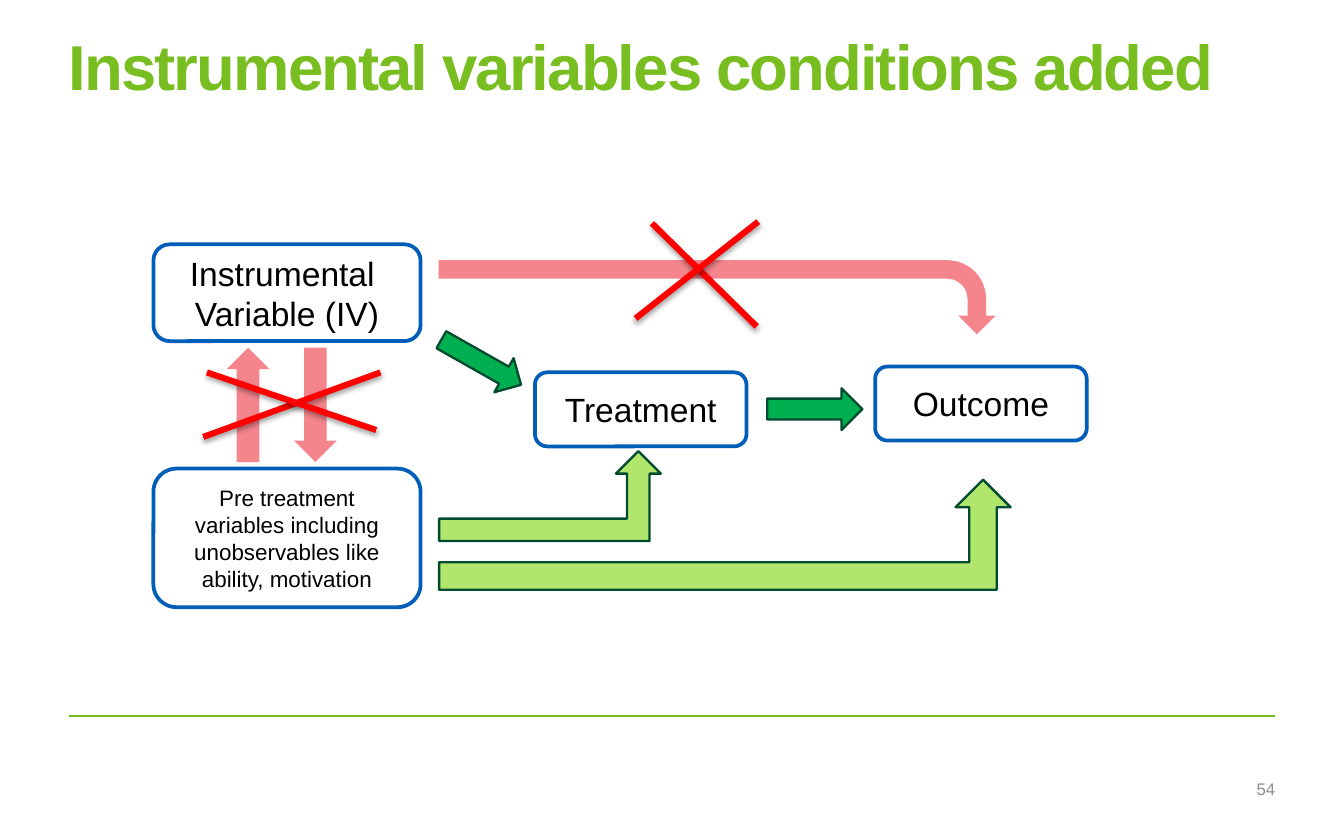
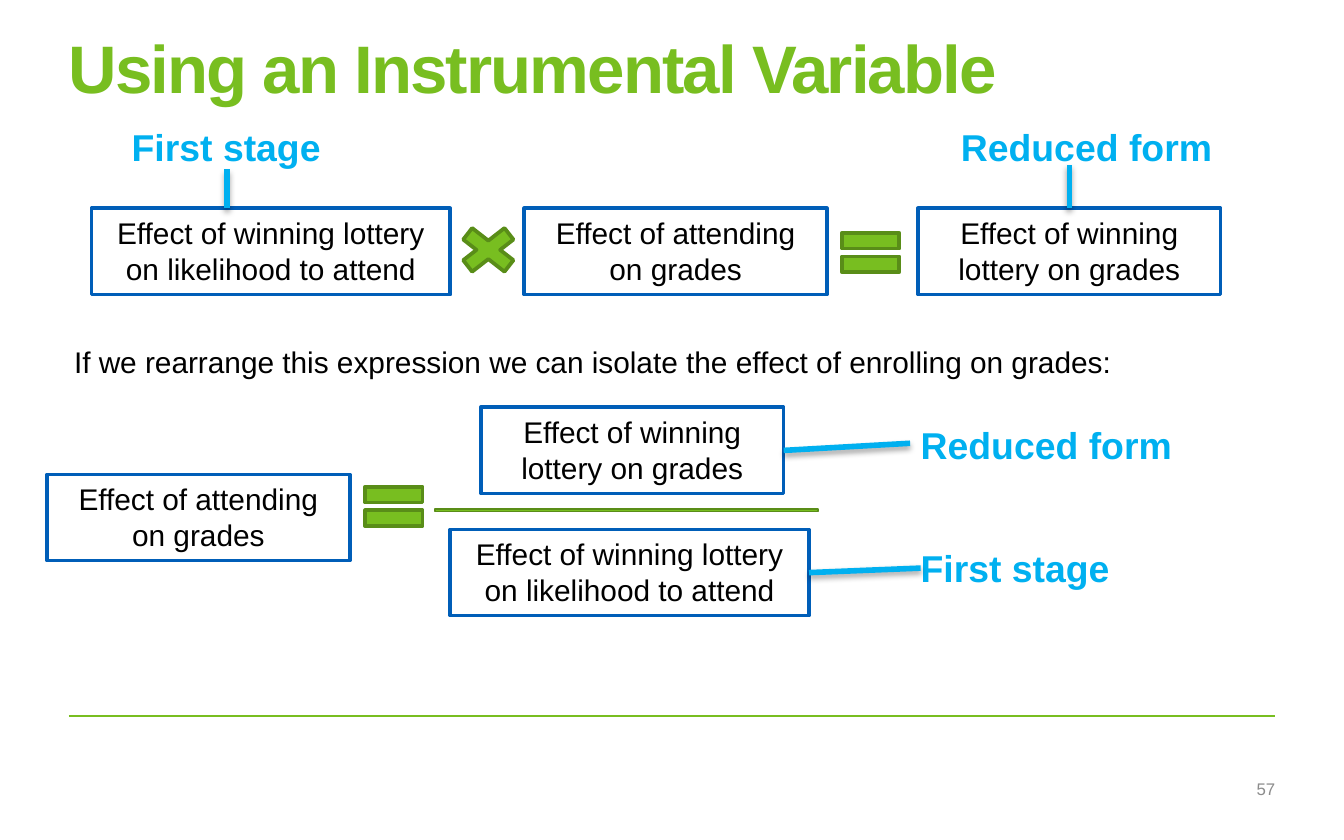
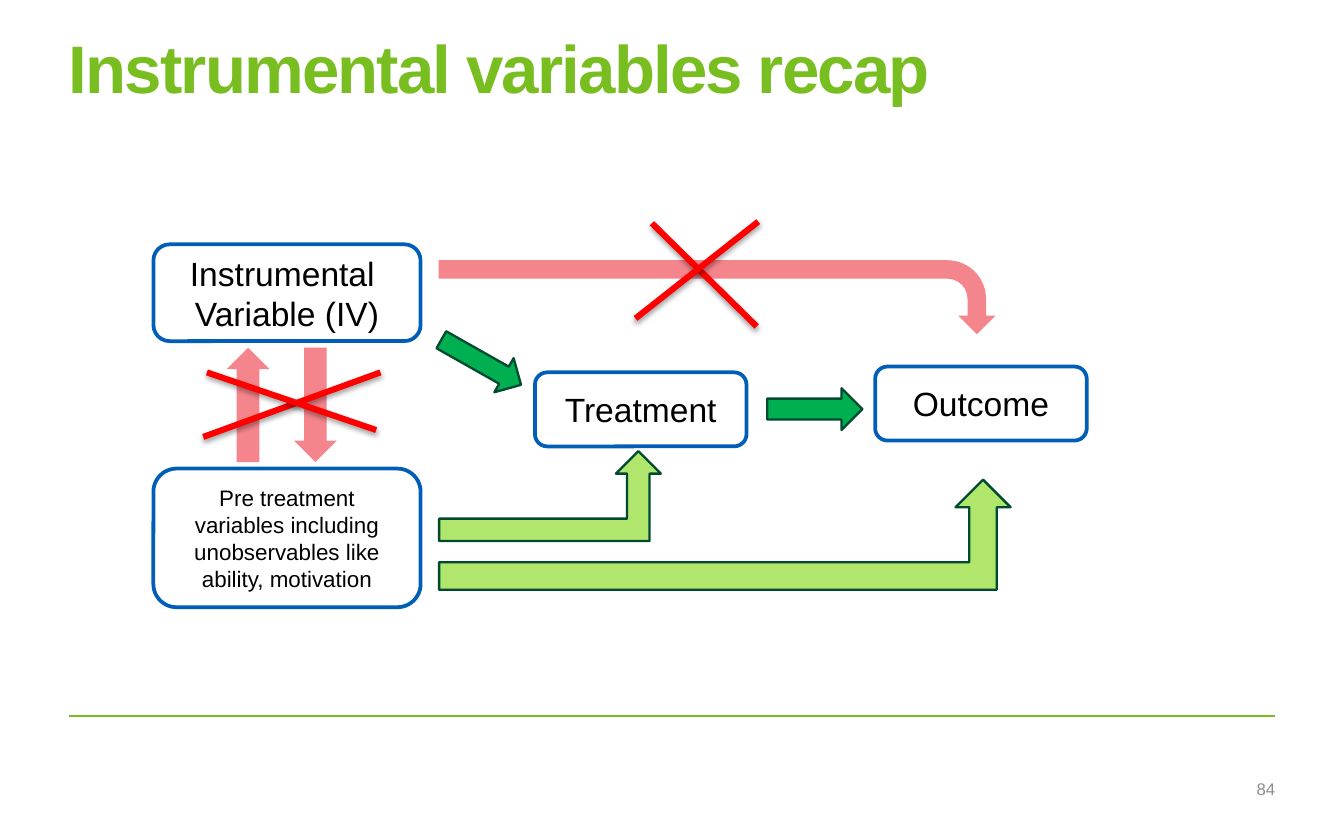
from lxml import etree
from pptx import Presentation
from pptx.dml.color import RGBColor
from pptx.enum.shapes import MSO_CONNECTOR, MSO_SHAPE
from pptx.enum.text import MSO_ANCHOR, PP_ALIGN
from pptx.oxml.ns import qn
from pptx.util import Cm, Pt

STRAIGHT = MSO_CONNECTOR.STRAIGHT
RECT = MSO_SHAPE.RECTANGLE
ROUND_RECT = MSO_SHAPE.ROUNDED_RECTANGLE
BENT_ARROW = MSO_SHAPE.BENT_ARROW
BENT_UP_ARROW = MSO_SHAPE.BENT_UP_ARROW
RIGHT_ARROW = MSO_SHAPE.RIGHT_ARROW
TIMES = MSO_SHAPE.MATH_MULTIPLY
EQUALS = MSO_SHAPE.MATH_EQUAL
MINUS = MSO_SHAPE.MATH_MINUS
TOP, MIDDLE = MSO_ANCHOR.TOP, MSO_ANCHOR.MIDDLE
LEFT, CENTER, RIGHT = PP_ALIGN.LEFT, PP_ALIGN.CENTER, PP_ALIGN.RIGHT
TOP_SIDE, RIGHT_SIDE = 0, 3

FONT = "Arial"
WHITE, BLACK, GREY = "FFFFFF", "000000", "8C8C8C"
GREEN, OLIVE, LIME = "78BE20", "598D18", "B0E66B"
CAUSAL_GREEN, DARK_GREEN = "00B050", "004B2F"
BLUE, SKY = "005EB8", "00B0F0"
PINK, RED = "F5858C", "FF0000"

MARGIN_LEFT, MARGIN_RIGHT = 1.3, 24.1
BOX_HEIGHT, WIDE_BOX, NARROW_BOX = 1.63, 6.78, 5.72
WIN_ON_ATTENDING = "Effect of winning lottery on likelihood to attend"
ATTENDING_ON_GRADES = "Effect of attending on grades"
WIN_ON_GRADES = "Effect of winning lottery on grades"


def color(hex_code):
    return RGBColor.from_string(hex_code)


def write(shape, text, size=16, ink=BLACK, bold=False, align=LEFT,
          anchor=TOP, line_spacing=None, tracking=None):
    """Fill a shape with text, one paragraph a line."""
    frame = shape.text_frame
    frame.word_wrap = True
    frame.vertical_anchor = anchor
    for index, line in enumerate(text.split("\n")):
        paragraph = frame.add_paragraph() if index else frame.paragraphs[0]
        paragraph.alignment = align
        if line_spacing:
            paragraph.line_spacing = line_spacing
        run = paragraph.add_run()
        run.text = line
        run.font.name = FONT
        run.font.size = Pt(size)
        run.font.bold = bold
        run.font.color.rgb = color(ink)
        if tracking:
            run.font._element.set("spc", str(tracking * 100))


def add_text(slide, text, left, top, width, height, **text_format):
    box = slide.shapes.add_textbox(Cm(left), Cm(top), Cm(width), Cm(height))
    frame = box.text_frame
    frame.margin_left = frame.margin_right = 0
    frame.margin_top = frame.margin_bottom = 0
    write(box, text, **text_format)


def add_figure(slide, kind, left, top, width, height, fill=WHITE, line=None,
               line_width=2, rotation=0, adjustments=()):
    figure = slide.shapes.add_shape(kind, Cm(left), Cm(top), Cm(width), Cm(height))
    figure.shadow.inherit = False
    figure.rotation = rotation
    for index, value in enumerate(adjustments):
        figure.adjustments[index] = value
    figure.fill.solid()
    figure.fill.fore_color.rgb = color(fill)
    if line:
        figure.line.color.rgb = color(line)
        figure.line.width = Pt(line_width)
    else:
        figure.line.fill.background()
    return figure


def add_box(slide, text, left, top, width, height, kind=RECT, **text_format):
    box = add_figure(slide, kind, left, top, width, height, line=BLUE)
    write(box, text, align=CENTER, **text_format)
    return box


def add_line(slide, start, end, ink, width, shadow_opacity=None, shadow_offset=1.6):
    line = slide.shapes.add_connector(STRAIGHT, *map(Cm, (*start, *end)))
    line.line.color.rgb = color(ink)
    line.line.width = Pt(width)
    effects = etree.SubElement(line._element.spPr, qn("a:effectLst"))
    if shadow_opacity:
        shadow = etree.SubElement(
            effects, qn("a:outerShdw"), blurRad=str(Pt(3.1)),
            dist=str(Pt(shadow_offset)), dir="5400000", rotWithShape="0")
        black = etree.SubElement(shadow, qn("a:srgbClr"), val=BLACK)
        etree.SubElement(black, qn("a:alpha"), val=str(shadow_opacity * 1000))
    return line


def add_pointer(slide, start, end):
    """Draw the line that ties a stage label to its box."""
    return add_line(slide, start, end, SKY, 3, shadow_opacity=35, shadow_offset=1.8)


def add_cross(slide, *strokes):
    for start, end in strokes:
        add_line(slide, start, end, RED, 3.25, shadow_opacity=38)


def add_slide(deck, title, number, title_size=36):
    """Start a slide with the shared title, rule and page number."""
    slide = deck.slides.add_slide(deck.slide_layouts[6])
    width = MARGIN_RIGHT - MARGIN_LEFT
    add_line(slide, (MARGIN_LEFT, 13.54), (MARGIN_RIGHT, 13.54), GREEN, 1)
    add_text(slide, title, MARGIN_LEFT, 0.74, width, 2.77, size=title_size,
             ink=GREEN, bold=True, line_spacing=0.85, tracking=-1)
    add_text(slide, str(number), MARGIN_RIGHT - 10, 14.73, 10, 0.38, size=9,
             ink=GREY, align=RIGHT, anchor=MIDDLE)
    return slide


def add_causal_diagram(slide):
    for text, left, top, width, height, size in (
        ("Instrumental \nVariable (IV)", 2.9, 4.62, 5.05, 1.83, 18),
        ("Pre treatment variables including unobservables like ability, motivation",
         2.9, 8.86, 5.05, 2.62, 12),
        ("Treatment", 10.11, 7.04, 4, 1.4, 18),
        ("Outcome", 16.54, 6.93, 4, 1.4, 18),
    ):
        add_box(slide, text, left, top, width, height, kind=ROUND_RECT,
                size=size, anchor=MIDDLE)

    for top, width, height in ((8.53, 4.19, 1.7), (9.07, 10.8, 2.08)):
        add_figure(slide, BENT_UP_ARROW, 8.3, top, width, height,
                   fill=LIME, line=DARK_GREEN, line_width=1.25)
    for left, top, width, height, rotation in (
        (14.5, 7.34, 1.8, 0.79, 0),
        (8.23, 6.48, 1.73, 0.74, 29.5),
    ):
        add_figure(slide, RIGHT_ARROW, left, top, width, height, rotation=rotation,
                   fill=CAUSAL_GREEN, line=DARK_GREEN, line_width=1.25)

    for left, rotation in ((4.88, 90), (3.61, 270)):
        add_figure(slide, RIGHT_ARROW, left, 7.25, 2.16, 0.81, fill=PINK,
                   rotation=rotation, adjustments=(0.53, 0.5))
    add_figure(slide, BENT_ARROW, 12.85, 0.36, 1.4, 10.52, fill=PINK,
               rotation=90, adjustments=(0.25, 0.25, 0.25, 0.52))

    add_cross(slide, ((12.32, 4.22), (14.3, 6.17)), ((12.01, 6.02), (14.33, 4.19)))
    add_cross(slide, ((3.84, 8.26), (7.19, 7.04)), ((3.91, 7.04), (7.11, 8.13)))


def add_effect_equations(slide):
    product_top = 3.94
    add_box(slide, WIN_ON_ATTENDING, 1.73, product_top, WIDE_BOX, BOX_HEIGHT)
    add_box(slide, ATTENDING_ON_GRADES, 9.91, product_top, NARROW_BOX, BOX_HEIGHT)
    product = add_box(slide, WIN_ON_GRADES, 17.35, product_top, NARROW_BOX, BOX_HEIGHT)

    add_box(slide, ATTENDING_ON_GRADES, 0.89, 8.97, NARROW_BOX, BOX_HEIGHT)
    numerator = add_box(slide, WIN_ON_GRADES, 9.09, 7.7, NARROW_BOX, BOX_HEIGHT)
    denominator = add_box(slide, WIN_ON_ATTENDING, 8.51, 10.01, WIDE_BOX, BOX_HEIGHT)

    for sign, left, top, width, height, line_width in (
        (TIMES, 8.48, 4.14, 1.5, 1.17, 2),
        (EQUALS, 15.72, 4.14, 1.47, 1.27, 2),
        (EQUALS, 6.71, 8.94, 1.47, 1.27, 2),
        (MINUS, 6.91, 9.53, 9.86, 0.23, 1),
    ):
        add_figure(slide, sign, left, top, width, height, fill=GREEN,
                   line=OLIVE, line_width=line_width)

    add_text(slide, "If we rearrange this expression we can isolate "
             "the effect of enrolling on grades:", 1.4, 6.5, 21, 0.69)
    for stage, left, top in (
        ("First stage", 2.49, 2.34),
        ("Reduced form", 18.16, 2.34),
        ("Reduced form", 17.4, 7.98),
        ("First stage", 17.4, 10.31),
    ):
        add_text(slide, stage, left, top, NARROW_BOX, 0.86, size=20, ink=SKY, bold=True)

    add_pointer(slide, (4.29, 3.2), (4.29, product_top))
    add_pointer(slide, (20.21, 3.12), (20.21, product_top)).end_connect(product, TOP_SIDE)
    add_pointer(slide, (14.81, 8.51), (17.2, 8.38)).begin_connect(numerator, RIGHT_SIDE)
    add_pointer(slide, (15.29, 10.82), (17.4, 10.74)).begin_connect(denominator, RIGHT_SIDE)


def main():
    deck = Presentation()
    deck.slide_width, deck.slide_height = Cm(25.4), Cm(15.88)
    add_causal_diagram(
        add_slide(deck, "Instrumental variables conditions added", 54, title_size=34))
    add_effect_equations(add_slide(deck, "Using an Instrumental Variable", 57))
    add_causal_diagram(add_slide(deck, "Instrumental variables recap", 84))
    deck.save("out.pptx")


if __name__ == "__main__":
    main()
